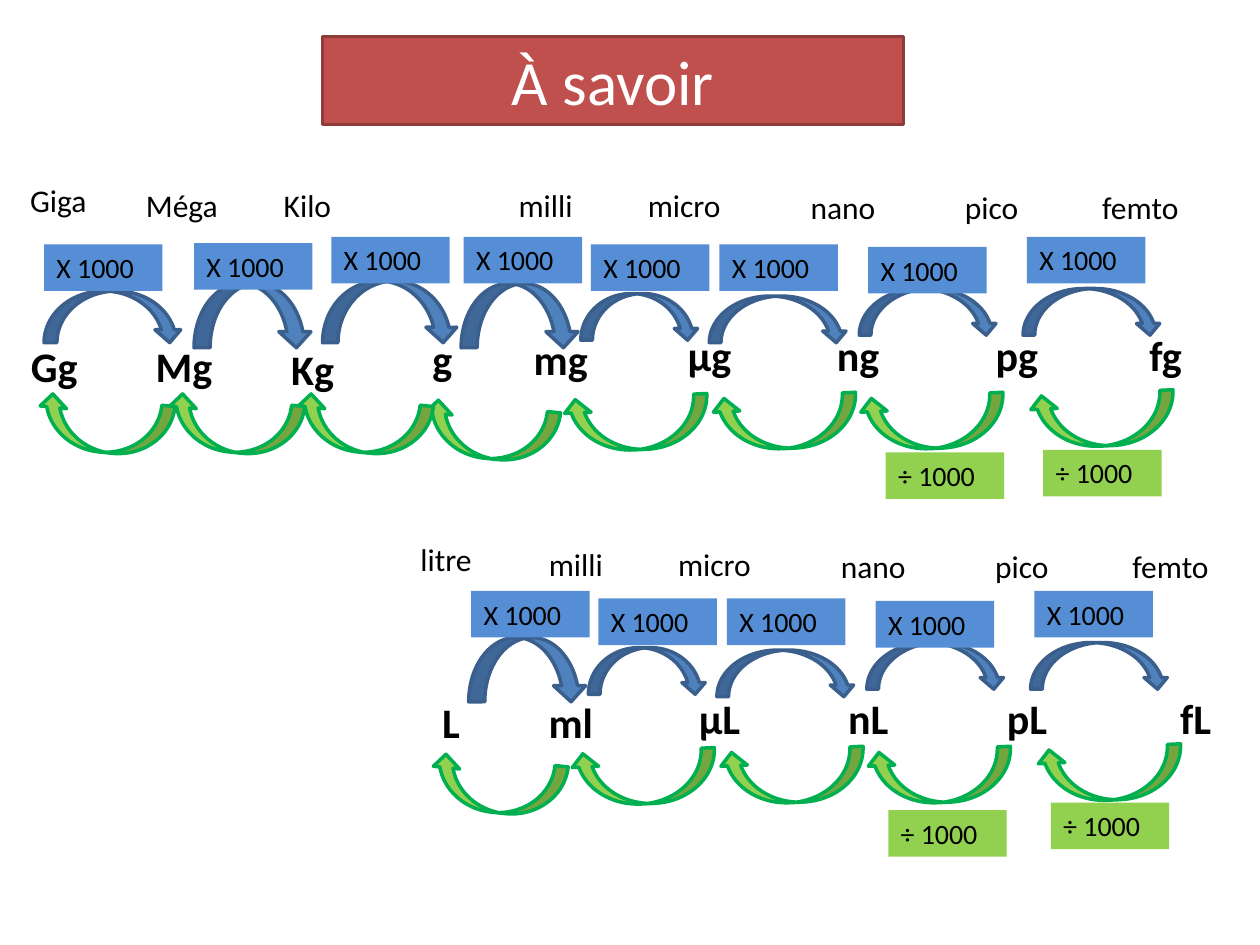
from pptx import Presentation
from pptx.dml.color import RGBColor
from pptx.enum.shapes import MSO_SHAPE
from pptx.enum.text import MSO_ANCHOR, MSO_AUTO_SIZE, PP_ALIGN
from pptx.util import Inches, Pt

RECT = MSO_SHAPE.RECTANGLE
ARC = MSO_SHAPE.CURVED_DOWN_ARROW
LEFT, CENTER = PP_ALIGN.LEFT, PP_ALIGN.CENTER
MIDDLE = MSO_ANCHOR.MIDDLE
FIT_SHAPE, NO_FIT = MSO_AUTO_SIZE.SHAPE_TO_FIT_TEXT, MSO_AUTO_SIZE.NONE

FONT = "Calibri"
COLORS = {
    "title": "C0504D", "title_line": "8E3B39", "white": "FFFFFF", "black": "000000",
    "times": "558ED5", "times_arc": "4F81BD", "times_line": "3A5F8C",
    "divide": "92D050", "divide_line": "00B050",
}

# Labels: text, left, top
MASS_UNITS = [
    ("Gg", -0.28, 2.65), ("Mg", 0.75, 2.65), ("Kg", 1.77, 2.68),
    ("g", 2.8, 2.6), ("mg", 3.74, 2.6), ("µg", 4.92, 2.57),
    ("ng", 6.1, 2.57), ("pg", 7.36, 2.57), ("fg", 8.54, 2.57),
]
VOLUME_UNITS = [
    ("L", 2.87, 5.48), ("ml", 3.82, 5.48), ("µL", 5, 5.45),
    ("nL", 6.18, 5.45), ("pL", 7.44, 5.45), ("fL", 8.78, 5.45),
]
LARGE_PREFIXES = [("Giga", 0.14, 1.39, LEFT), ("Méga", 1.06, 1.43, LEFT),
                  ("Kilo", 1.93, 1.43, CENTER)]
SMALL_PREFIXES = [("milli", 3.82, 1.43), ("micro", 4.92, 1.43), ("nano", 6.18, 1.44),
                  ("pico", 7.36, 1.44), ("femto", 8.54, 1.44)]
PREFIX_SHIFT = (0.24, 2.85)

# Steps between neighbouring units, the first three for masses only
TIMES_ARCS = [
    (0.35, 2.31, 1.1, 0.41), (1.54, 2.25, 0.94, 0.51), (2.56, 2.23, 1.08, 0.49),
    (3.66, 2.25, 0.94, 0.51), (4.61, 2.33, 0.94, 0.37), (5.63, 2.35, 1.1, 0.37),
    (6.82, 2.29, 1.1, 0.37), (8.12, 2.29, 1.1, 0.37),
]
TIMES_BADGES = [(0.35, 1.94), (1.54, 1.93), (2.63, 1.88), (3.68, 1.88),
                (4.69, 1.94), (5.71, 1.94), (6.89, 1.96), (8.15, 1.88)]
WIDE, NARROW = (1.15, 177.3), (1.08, 185.9)  # width, rotation
DIVIDE_ARCS = [
    (0.29, 3.17, *NARROW), (1.32, 3.17, *NARROW), (2.34, 3.17, *NARROW),
    (3.35, 3.22, *NARROW), (4.47, 3.15, *WIDE), (5.65, 3.14, *WIDE),
    (6.82, 3.14, *WIDE), (8.17, 3.12, *WIDE),
]
DIVIDE_BADGES = [(7.03, 3.59), (8.28, 3.57), (7.05, 6.43), (8.34, 6.37)]
MASS_ONLY_STEPS = 3
STEP_SHIFT = (0.06, 2.81)


def rgb(name):
    return RGBColor.from_string(COLORS[name])


def add_run(tf, text, size, color="black", bold=False, align=CENTER):
    p = tf.paragraphs[0]
    p.alignment = align
    r = p.add_run()
    r.text = text
    r.font.name = FONT
    r.font.size = Pt(size)
    r.font.bold = bold
    r.font.color.rgb = rgb(color)


def paint(sp, fill, line=None):
    sp.fill.solid()
    sp.fill.fore_color.rgb = rgb(fill)
    if line:
        sp.line.color.rgb = rgb(line)
        sp.line.width = Pt(2)
    else:
        sp.line.fill.background()


def add_title(s, text):
    sp = s.shapes.title
    sp.left, sp.top = Inches(2.56), Inches(0.29)
    sp.width, sp.height = Inches(4.61), Inches(0.7)
    paint(sp, "title", "title_line")
    tf = sp.text_frame
    tf.auto_size = NO_FIT
    tf.vertical_anchor = MIDDLE
    add_run(tf, text, 36, "white")


def add_label(s, text, x, y, w, h, size, bold=False, align=CENTER):
    sp = s.shapes.add_textbox(Inches(x), Inches(y), Inches(w), Inches(h))
    tf = sp.text_frame
    tf.word_wrap = True
    tf.auto_size = FIT_SHAPE
    add_run(tf, text, size, bold=bold, align=align)


def add_unit(s, text, x, y):
    add_label(s, text, x, y, 1.42, 0.5, 24, bold=True)


def add_prefix(s, text, x, y, align=CENTER):
    add_label(s, text, x, y, 1.02, 0.4, 18, align=align)


def add_arc(s, x, y, w, h, fill, line, rotation=0):
    sp = s.shapes.add_shape(ARC, Inches(x), Inches(y), Inches(w), Inches(h))
    sp.shadow.inherit = False
    sp.rotation = rotation
    paint(sp, fill, line)


def add_badge(s, text, x, y, fill):
    sp = s.shapes.add_shape(RECT, Inches(x), Inches(y), Inches(0.94), Inches(0.37))
    sp.shadow.inherit = False
    paint(sp, fill)
    tf = sp.text_frame
    tf.word_wrap = True
    tf.auto_size = FIT_SHAPE
    tf.vertical_anchor = MSO_ANCHOR.TOP
    add_run(tf, text, 16, align=LEFT)


def add_steps(s, first=0, dx=0, dy=0):
    """Add the conversion arrows and multiplication badges from a given step on."""
    for x, y, w, h in TIMES_ARCS[first:]:
        add_arc(s, x + dx, y + dy, w, h, "times_arc", "times_line")
    for x, y, w, rotation in reversed(DIVIDE_ARCS[first:]):
        add_arc(s, x + dx, y + dy, w, 0.42, "divide", "divide_line", rotation)
    for x, y in TIMES_BADGES[first:]:
        add_badge(s, "X 1000", x + dx, y + dy, "times")


def main():
    prs = Presentation()
    prs.slide_width, prs.slide_height = Inches(10), Inches(7.5)
    s = prs.slides.add_slide(prs.slide_layouts[5])
    add_title(s, "À savoir")

    for unit in MASS_UNITS + VOLUME_UNITS:
        add_unit(s, *unit)
    for prefix in LARGE_PREFIXES + SMALL_PREFIXES:
        add_prefix(s, *prefix)
    add_prefix(s, "litre", 3.03, 4.24)
    dx, dy = PREFIX_SHIFT
    for text, x, y in SMALL_PREFIXES:
        add_prefix(s, text, x + dx, y + dy)

    add_steps(s)
    add_steps(s, MASS_ONLY_STEPS, *STEP_SHIFT)
    for x, y in DIVIDE_BADGES:
        add_badge(s, "÷ 1000", x, y, "divide")

    prs.save("out.pptx")


if __name__ == "__main__":
    main()
